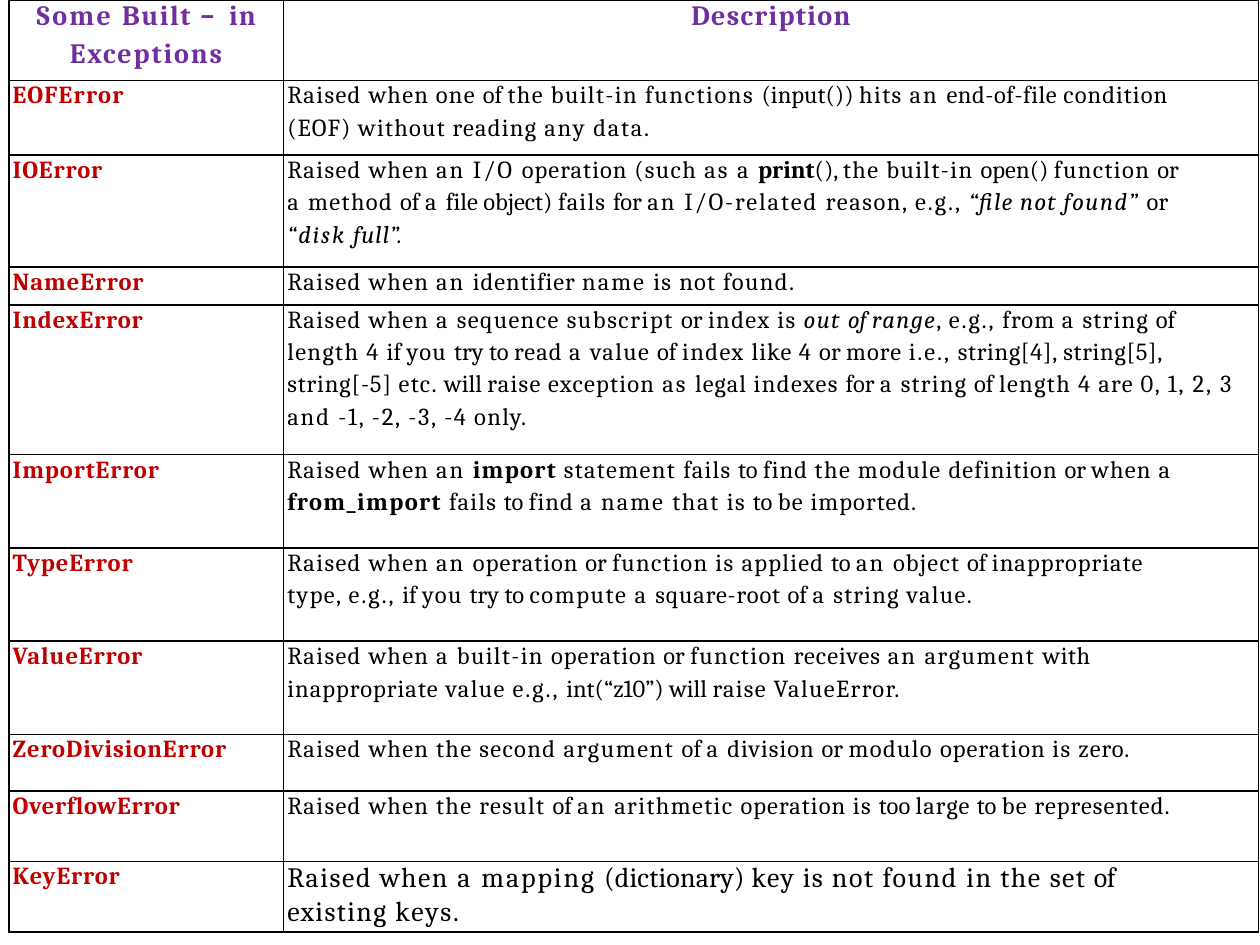
from dataclasses import dataclass, field
from itertools import groupby
from typing import Optional, Union

from lxml.etree import SubElement
from pptx import Presentation
from pptx.dml.color import RGBColor
from pptx.enum.text import PP_ALIGN
from pptx.oxml.ns import qn
from pptx.util import Inches, Pt


@dataclass(frozen=True)
class Theme:
    font: str = "Cambria"
    dash_font: str = "Karla"
    heading: str = "6F2F9F"
    exception: str = "C00000"
    text: str = "000000"
    border: str = "000000"
    large: int = 16
    normal: int = 14


@dataclass(frozen=True)
class ExceptionRow:
    name: str
    lines: list[str]  # *bold* and ~italic~
    height: float
    before: float = 0.6
    name_spacing: float = 0.5
    size: int = 14
    right_margin: float = 0
    line_spacing: Optional[Union[float, Pt]] = None  # of the last line
    last_before: float = 2.5
    spacing: dict[str, float] = field(default_factory=dict)


THEME = Theme()
COLUMN_WIDTHS = (2.18, 7.74)
HEADER_HEIGHT = 0.64
DEFAULT_SPACING = 0.8

# Letter spacing in points, by word; every other word takes DEFAULT_SPACING
SPACING_GROUPS = {
    0: "of or for to if try file object) open() (input()) print (), root int(“z10”) will too",
    0.3: "end-of-file with",
    0.4: "string[4], string[5],",
    0.5: "identifier zero. string[-5] square-root",
    0.6: "condition (EOF) operation “file from read like more legal related find definition "
         "imported. inappropriate receives division large represented. full”.",
    0.7: "when one without reading fails not string raise exception are import be applied object",
    0.9: "functions any reason, found” subscript 0, that compute argument",
    1.0: "data. -1, -2, -3,",
    1.1: "a e.g., i.e., I/O-related name and “disk",
    1.2: "an as I/O 1, 2,",
}
WORD_SPACING = {word: spacing for spacing, words in SPACING_GROUPS.items() for word in words.split()}
LARGE_SPACING = {"Raised": 0.9, "when": 0.9, "a": 1.4, "mapping": 1.1, "(dictionary)": 0.1,
                 "not": 0.9, "found": 1.0, "in": 0.9, "the": 0.9, "of": -0.2, "keys.": 1.1}

ROWS = [
    ExceptionRow("EOFError", [
        "Raised when one of the built-in functions (input()) hits an end-of-file condition",
        "(EOF) without reading any data."], 0.59, 0.5, 0.7),
    ExceptionRow("IOError", [
        "Raised when an I/O operation (such as a *print*(), the built-in open() function or",
        "a method of a file object) fails for an I/O-related reason, e.g., ~“file not found” ~or",
        "~“disk full”.~"], 0.89, 0.5),
    ExceptionRow("NameError", ["Raised when an identifier name is not found."], 0.3, 0.5),
    ExceptionRow("IndexError", [
        "Raised when a sequence subscript or index is ~out of range~, e.g., from a string of",
        "length 4 if you try to read a value of index like 4 or more i.e., string[4], string[5], "
        "string[-5] etc. will raise exception as legal indexes for a string of length 4 are "
        "0, 1, 2, 3 and -1, -2, -3, -4 only."],
        1.19, 0.5, right_margin=0.08, line_spacing=1.15, last_before=0),
    ExceptionRow("ImportError", [
        "Raised when an *import *statement fails to find the module definition or when a",
        "*from_import *fails to find a name that is to be imported."], 0.74),
    ExceptionRow("TypeError", [
        "Raised when an operation or function is applied to an object of inappropriate",
        "type, e.g., if you try to compute a square-root of a string value."], 0.74),
    ExceptionRow("ValueError", [
        "Raised when a built-in operation or function receives an argument with",
        "inappropriate value e.g., int(“z10”) will raise ValueError."], 0.74),
    ExceptionRow("ZeroDivisionError", [
        "Raised when the second argument of a division or modulo operation is zero."], 0.45),
    ExceptionRow("OverflowError", [
        "Raised when the result of an arithmetic operation is too large to be represented."], 0.56,
        name_spacing=0.4),
    ExceptionRow("KeyError", [
        "Raised when a mapping (dictionary) key is not found in the set of existing keys."], 0.56,
        size=THEME.large, right_margin=0.5, line_spacing=Pt(19), last_before=0.1,
        spacing=LARGE_SPACING),
]


def add_run(paragraph, text: str, color: str, spacing: float, size: int,
            bold: bool = False, italic: bool = False, font: str = THEME.font) -> None:
    run = paragraph.add_run()
    run.text = text
    formats = {"name": font, "size": Pt(size), "bold": bold, "italic": italic}
    for attribute, value in formats.items():
        setattr(run.font, attribute, value)
    run.font.color.rgb = RGBColor.from_string(color)
    run._r.get_or_add_rPr().set("spc", str(round(spacing * 100)))


def add_marked_text(paragraph, line: str, row: ExceptionRow) -> None:
    """Turn *bold* and ~italic~ marks into runs, one for each stretch of equal letter spacing."""
    spacings = {**WORD_SPACING, **row.spacing}
    for bold_index, bold_part in enumerate(line.split("*")):
        for italic_index, part in enumerate(bold_part.split("~")):
            words = part.split(" ")
            pieces = [word + " " for word in words[:-1]] + words[-1:]
            groups = groupby(pieces, lambda piece: spacings.get(piece.strip(), DEFAULT_SPACING))
            for spacing, group in groups:
                text = "".join(group)
                if text:
                    add_run(paragraph, text, THEME.text, spacing, row.size,
                            bold_index % 2 == 1, italic_index % 2 == 1)


def add_paragraph(cell, index: int, before: float, indent: float = 0, right: float = 0):
    frame = cell.text_frame
    paragraph = frame.paragraphs[0] if index == 0 else frame.add_paragraph()
    paragraph.space_before = Pt(before)
    properties = paragraph._p.get_or_add_pPr()
    properties.set("marL", str(Inches(indent)))
    properties.set("marR", str(Inches(right)))
    return paragraph


def format_cell(cell, top_margin: float, top_border: float, right_border: float) -> None:
    margins = {"margin_left": 0, "margin_top": Inches(top_margin),
               "margin_right": 0, "margin_bottom": 0}
    for attribute, value in margins.items():
        setattr(cell, attribute, value)
    properties = cell._tc.get_or_add_tcPr()
    for tag, width in {"lnL": 1, "lnR": right_border, "lnT": top_border, "lnB": 1}.items():
        line = SubElement(properties, qn(f"a:{tag}"), w=str(Pt(width)))
        fill = SubElement(line, qn("a:solidFill"))
        SubElement(fill, qn("a:srgbClr"), val=THEME.border)
    cell.fill.background()


def fill_header(table) -> None:
    names, description = table.cell(0, 0), table.cell(0, 1)
    dash = THEME.dash_font
    headings = [
        (names, 0, 0.3, [("Some ", 1.4, THEME.font), ("Built ", 0.9, THEME.font),
                         ("– ", 2.1, dash), ("in", 0.7, THEME.font)]),
        (names, 1, 2.9, [("Exceptions", 1.1, THEME.font)]),
        (description, 0, 0.3, [("Description", 0.8, THEME.font)]),
    ]
    for cell, index, before, runs in headings:
        paragraph = add_paragraph(cell, index, before)
        paragraph.alignment = PP_ALIGN.CENTER
        for text, spacing, font in runs:
            add_run(paragraph, text, THEME.heading, spacing, THEME.large, bold=True, font=font)


def fill_row(table, row_index: int, row: ExceptionRow) -> None:
    name = add_paragraph(table.cell(row_index, 0), 0, row.before, 0.03)
    add_run(name, row.name, THEME.exception, row.name_spacing, THEME.normal, bold=True)
    last = len(row.lines) - 1
    for index, line in enumerate(row.lines):
        special = index == last and row.line_spacing is not None
        before = row.last_before if index or special else row.before
        paragraph = add_paragraph(table.cell(row_index, 1), index, before, 0.03, row.right_margin)
        if special:
            paragraph.line_spacing = row.line_spacing
        add_marked_text(paragraph, line, row)


def main() -> None:
    presentation = Presentation()
    presentation.slide_width, presentation.slide_height = Inches(10), Inches(7.5)
    slide = presentation.slides.add_slide(presentation.slide_layouts[6])
    heights = [HEADER_HEIGHT] + [row.height for row in ROWS]
    table = slide.shapes.add_table(len(heights), 2, Inches(0.07), 0, Inches(sum(COLUMN_WIDTHS)),
                                   Inches(sum(heights))).table
    table.first_row = table.horz_banding = False
    for column, width in zip(table.columns, COLUMN_WIDTHS):
        column.width = Inches(width)
    for row_index, height in enumerate(heights):
        table.rows[row_index].height = Inches(height)
        for column_index in range(2):
            large = row_index == 0 or (column_index == 1 and ROWS[row_index - 1].size == THEME.large)
            format_cell(table.cell(row_index, column_index), 0 if large else 0.01,
                        1 if row_index else 0.5, 0.5 if column_index else 1)
    fill_header(table)
    for row_index, row in enumerate(ROWS, start=1):
        fill_row(table, row_index, row)
    presentation.save("out.pptx")


if __name__ == "__main__":
    main()
